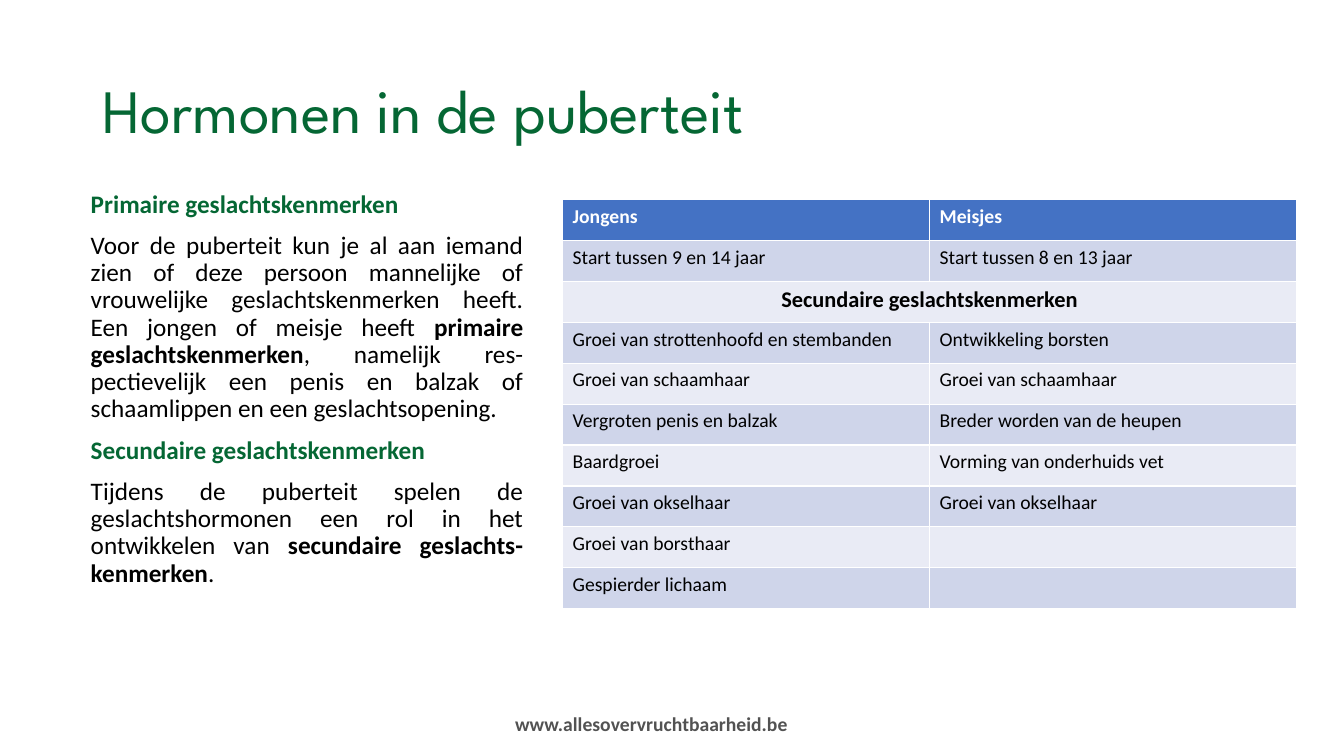
from lxml import etree
from pptx import Presentation
from pptx.dml.color import RGBColor
from pptx.enum.text import MSO_ANCHOR, MSO_AUTO_SIZE, PP_ALIGN
from pptx.oxml.ns import qn
from pptx.util import Emu, Pt

PX = 9144  # 100 px to the inch
LEFT, CENTER, JUSTIFY = PP_ALIGN.LEFT, PP_ALIGN.CENTER, PP_ALIGN.JUSTIFY
MIDDLE = MSO_ANCHOR.MIDDLE
NO_FIT = MSO_AUTO_SIZE.NONE

GREEN = RGBColor(0x05, 0x67, 0x34)
GREY = RGBColor(0x52, 0x52, 0x52)
BLACK = RGBColor(0, 0, 0)
WHITE = RGBColor(0xFF, 0xFF, 0xFF)
HEADER_BLUE = RGBColor(0x44, 0x72, 0xC4)
BANDS = (RGBColor(0xE9, 0xEB, 0xF5), RGBColor(0xCF, 0xD5, 0xEA))

# Each paragraph is a list of (text, bold, colour)
BODY = [
    [("Primaire geslachtskenmerken", True, GREEN)],
    [("Voor de puberteit kun je al aan iemand zien of deze persoon mannelijke "
      "of vrouwelijke geslachtskenmerken heeft. Een jongen of meisje heeft ",
      False, BLACK),
     ("primaire geslachtskenmerken", True, BLACK),
     (", namelijk res-pectievelijk een penis en balzak of schaamlippen en een "
      "geslachtsopening.", False, BLACK)],
    [("Secundaire geslachtskenmerken", True, GREEN)],
    [("Tijdens de puberteit spelen de geslachtshormonen een rol in het "
      "ontwikkelen van ", False, BLACK),
     ("secundaire geslachts-kenmerken", True, BLACK),
     (".", False, BLACK)],
]

# A row with one entry spans both columns
ROWS = [
    ("Jongens", "Meisjes"),
    ("Start tussen 9 en 14 jaar", "Start tussen 8 en 13 jaar"),
    ("Secundaire geslachtskenmerken",),
    ("Groei van strottenhoofd en stembanden", "Ontwikkeling borsten"),
    ("Groei van schaamhaar", "Groei van schaamhaar"),
    ("Vergroten penis en balzak", "Breder worden van de heupen"),
    ("Baardgroei", "Vorming van onderhuids vet"),
    ("Groei van okselhaar", "Groei van okselhaar"),
    ("Groei van borsthaar", ""),
    ("Gespierder lichaam", ""),
]


def box(*lengths):
    return [Emu(n * PX) for n in lengths]


def add_text(p, text, size=14, color=BLACK, bold=False, font="Calibri"):
    r = p.add_run()
    r.text = text
    r.font.name = font
    r.font.size = Pt(size)
    r.font.bold = bold
    r.font.color.rgb = color


def place(sp, *lengths):
    sp.left, sp.top, sp.width, sp.height = box(*lengths)
    sp.text_frame.auto_size = NO_FIT
    return sp.text_frame


def fill_title(sp):
    tf = place(sp, 92, 40, 1150, 145)
    tf.vertical_anchor = MIDDLE
    p = tf.paragraphs[0]
    p.alignment = LEFT
    p.line_spacing = 0.9
    add_text(p, "Hormonen in de puberteit", size=44, color=GREEN,
             font="League Spartan")


def fill_body(sp):
    tf = place(sp, 80, 185, 449, 491)
    for i, runs in enumerate(BODY):
        p = tf.add_paragraph() if i else tf.paragraphs[0]
        # No bullet and no hanging indent
        pPr = p._p.get_or_add_pPr()
        pPr.set("marL", "0")
        pPr.set("indent", "0")
        etree.SubElement(pPr, qn("a:buNone"))
        p.alignment = JUSTIFY
        p.line_spacing = 0.9
        p.space_before = Pt(10 if i else 0)
        for text, bold, color in runs:
            add_text(p, text, size=18, color=color, bold=bold)


def add_traits_table(s):
    table = s.shapes.add_table(len(ROWS), 2, *box(558, 198, 728, 406)).table
    for i, row in enumerate(ROWS):
        header, span = i == 0, len(row) == 1
        if span:
            table.cell(i, 0).merge(table.cell(i, 1))
        for j, text in enumerate(row):
            cell = table.cell(i, j)
            cell.fill.solid()
            cell.fill.fore_color.rgb = HEADER_BLUE if header else BANDS[i % 2]
            p = cell.text_frame.paragraphs[0]
            p.alignment = CENTER if span else LEFT
            if text:
                add_text(p, text, size=16 if span else 14, bold=header or span,
                         color=WHITE if header else BLACK)


def add_footer(s):
    tf = s.shapes.add_textbox(*box(501, 701, 300, 34)).text_frame
    tf.word_wrap = True
    add_text(tf.paragraphs[0], "www.allesovervruchtbaarheid.be", color=GREY,
             bold=True)


def main():
    prs = Presentation()
    prs.slide_width, prs.slide_height = box(1333, 750)
    s = prs.slides.add_slide(prs.slide_layouts[1])
    fill_title(s.shapes.title)
    fill_body(s.placeholders[1])
    add_traits_table(s)
    add_footer(s)
    prs.save("out.pptx")


if __name__ == "__main__":
    main()
